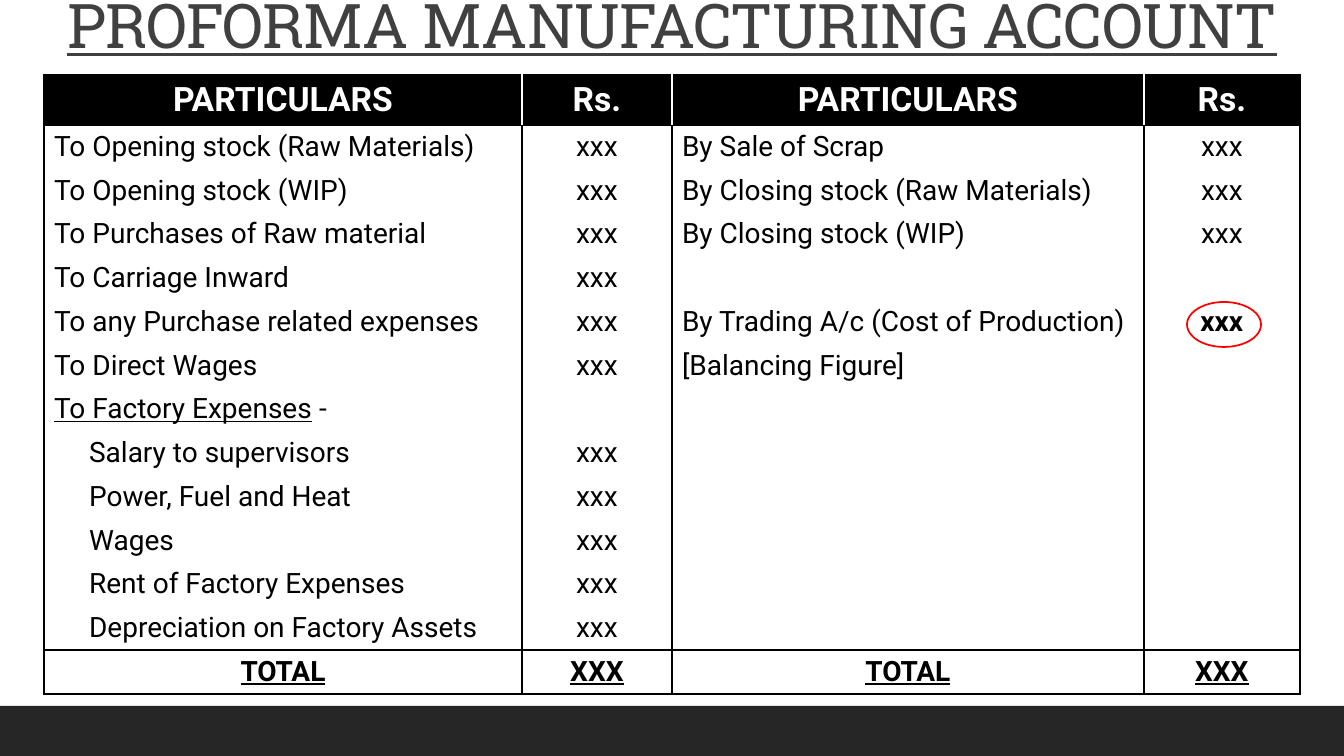
import dataclasses
import itertools

import lxml.etree
import pptx
import pptx.dml.color
import pptx.enum.shapes
import pptx.enum.text
import pptx.oxml.ns
import pptx.util

SLIDE_WIDTH, SLIDE_HEIGHT = 1344, 756
SCALE = 12192000 / SLIDE_WIDTH
CENTER = pptx.enum.text.PP_ALIGN.CENTER
LEFT = pptx.enum.text.PP_ALIGN.LEFT


@dataclasses.dataclass(frozen=True)
class Theme:
    heading_font: str = "Roboto Slab"
    body_font: str = "Roboto"
    heading_size: int = 44
    header_size: int = 24
    body_size: int = 20
    heading: str = "404040"
    ink: str = "000000"
    paper: str = "FFFFFF"
    footer: str = "262626"
    highlight: str = "FF0000"
    rule_width: float = 1.5
    ring_width: float = 1.25


THEME = Theme()
HEADINGS = ["PARTICULARS", "Rs."] * 2
DEBITS = [
    "To Opening stock (Raw Materials)", "To Opening stock (WIP)",
    "To Purchases of Raw material", "To Carriage Inward",
    "To any Purchase related expenses", "To Direct Wages",
    "To Factory Expenses",
]
FACTORY_EXPENSES = [
    "Salary to supervisors", "Power, Fuel and Heat", "Wages",
    "Rent of Factory Expenses", "Depreciation on Factory Assets",
]
CREDITS = [
    "By Sale of Scrap", "By Closing stock (Raw Materials)",
    "By Closing stock (WIP)", "", "By Trading A/c (Cost of Production)",
    "[Balancing Figure]",
]
TOTALS = ["TOTAL", "XXX"] * 2
COLUMN_WIDTHS = [478, 150, 472, 156]
HEADER_HEIGHT = 50
INDENT = 35
BALANCE_ROW = 5


def px(length):
    return pptx.util.Emu(round(length * SCALE))


def color(value):
    return pptx.dml.color.RGBColor.from_string(value)


def style(para, font_name, size, ink, align, bold=False, underline=False):
    para.alignment = align
    font = para.font
    font.name, font.size = font_name, pptx.util.Pt(size)
    font.color.rgb = color(ink)
    font.bold, font.underline = bold, underline


def add_shape(page, kind, box):
    shape = page.shapes.add_shape(kind, *map(px, box))
    shape.shadow.inherit = False
    return shape


def add_footer(page, box):
    bar = add_shape(page, pptx.enum.shapes.MSO_SHAPE.RECTANGLE, box)
    bar.fill.solid()
    bar.fill.fore_color.rgb = color(THEME.footer)
    bar.line.fill.background()


def add_title(page, box):
    frame = page.shapes.add_textbox(*map(px, box)).text_frame
    frame.word_wrap = True
    para = frame.paragraphs[0]
    para.line_spacing = 0.9
    span = para.add_run()
    span.text = "PROFORMA MANUFACTURING ACCOUNT"
    span.font._element.set("spc", "-50")
    style(para, THEME.heading_font, THEME.heading_size, THEME.heading,
          CENTER, underline=True)


def set_borders(cell, edges):
    properties = cell._tc.get_or_add_tcPr()
    for position, (side, ink) in enumerate(edges.items()):
        line = lxml.etree.Element(pptx.oxml.ns.qn(f"a:ln{side}"))
        line.set("w", str(pptx.util.Pt(THEME.rule_width)))
        if ink:
            fill = lxml.etree.SubElement(line, pptx.oxml.ns.qn("a:solidFill"))
            lxml.etree.SubElement(fill, pptx.oxml.ns.qn("a:srgbClr"), val=ink)
        else:
            lxml.etree.SubElement(line, pptx.oxml.ns.qn("a:noFill"))
        properties.insert(position, line)


def account_rows():
    debits = DEBITS + FACTORY_EXPENSES
    rows = [HEADINGS]
    for debit, credit in itertools.zip_longest(debits, CREDITS, fillvalue=""):
        debit_amount = "" if debit == DEBITS[-1] else "xxx"
        credit_amount = "xxx" if credit.startswith("By") else ""
        rows.append([debit, debit_amount, credit, credit_amount])
    return rows + [TOTALS]


def fill_cell(cell, text, row, column, last_row):
    header, total = row == 0, row == last_row
    cell.fill.solid()
    cell.fill.fore_color.rgb = color(THEME.ink if header else THEME.paper)
    inner = THEME.paper if header else THEME.ink
    set_borders(cell, {
        "L": inner if column else THEME.ink,
        "R": inner if column < len(COLUMN_WIDTHS) - 1 else THEME.ink,
        "T": THEME.ink if row in (0, 1, last_row) else None,
        "B": THEME.ink if row in (0, last_row - 1, last_row) else None,
    })
    para = cell.text_frame.paragraphs[0]
    if text:
        span = para.add_run()
        span.text = text
        if text == DEBITS[-1]:
            span.font.underline = True
            para.add_run().text = " -"
    balance = row == BALANCE_ROW and column == 3
    style(para, THEME.body_font,
          THEME.header_size if header else THEME.body_size,
          THEME.paper if header else THEME.ink,
          CENTER if header or total or column % 2 else LEFT,
          bold=header or total or balance, underline=total)
    if text in FACTORY_EXPENSES:
        para._p.get_or_add_pPr().set("marL", str(px(INDENT)))


def add_account(page, box):
    left, top, width, height = box
    rows = account_rows()
    last_row = len(rows) - 1
    frame = page.shapes.add_table(len(rows), len(COLUMN_WIDTHS), *map(px, box))
    table = frame.table
    table.first_row = table.horz_banding = False
    for column, column_width in zip(table.columns, COLUMN_WIDTHS):
        column.width = px(column_width)
    row_height = (height - HEADER_HEIGHT) / last_row
    for row, texts in enumerate(rows):
        table.rows[row].height = px(row_height if row else HEADER_HEIGHT)
        for column, text in enumerate(texts):
            fill_cell(table.cell(row, column), text, row, column, last_row)
    ring_top = top + HEADER_HEIGHT + round(row_height * (BALANCE_ROW - 1)) + 2
    add_ring(page, (left + width - 113, ring_top, 74, 45))


def add_ring(page, box):
    ring = add_shape(page, pptx.enum.shapes.MSO_SHAPE.OVAL, box)
    ring.fill.background()
    ring.line.color.rgb = color(THEME.highlight)
    ring.line.width = pptx.util.Pt(THEME.ring_width)


def main():
    deck = pptx.Presentation()
    deck.slide_width, deck.slide_height = px(SLIDE_WIDTH), px(SLIDE_HEIGHT)
    page = deck.slides.add_slide(deck.slide_layouts[6])
    add_footer(page, (0, 706, SLIDE_WIDTH, 50))
    add_title(page, (0, -10, SLIDE_WIDTH, 85))
    add_account(page, (44, 75, sum(COLUMN_WIDTHS), 619))
    deck.save("out.pptx")


if __name__ == "__main__":
    main()
